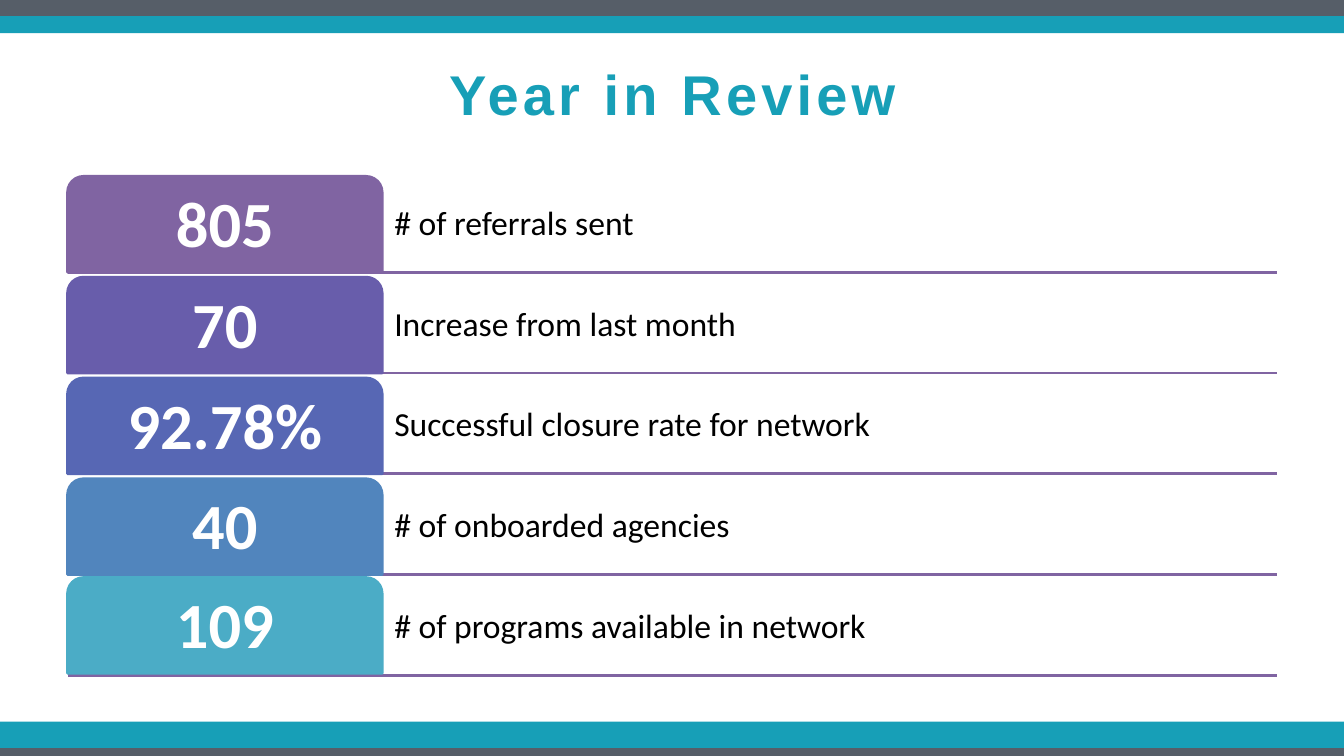
from pptx import Presentation
from pptx.dml.color import RGBColor
from pptx.enum.shapes import MSO_CONNECTOR, MSO_SHAPE
from pptx.enum.text import MSO_ANCHOR, PP_ALIGN
from pptx.oxml.ns import qn
from pptx.util import Inches, Pt
from lxml.etree import SubElement

GREY, TEAL, PURPLE = "565E68", "179FB7", "8064A2"
LEFT, TAB_W, ROW_W = 0.67, 3.12, 12
TOP, PITCH, ROW_H = 1.75, 1, 0.95

# value, label, tab colour, tab shift
ROWS = [
    ("805", "# of referrals sent", PURPLE, 0),
    ("70", "Increase from last month", "685DAB", 0),
    ("92.78%", "Successful closure rate for network", "5767B4", 0),
    ("40", "# of onboarded agencies", "5185BD", 0),
    ("109", "# of programs available in network", "4BACC6", -0.02),
]

# top, height, colour of the full-width bars
BARS = [(7.42, 0.08, GREY), (7.16, 0.26, TEAL), (0, 0.17, GREY), (0.16, 0.17, TEAL)]


def rgb(color):
    return RGBColor.from_string(color)


def box(x, y, w, h):
    return [Inches(v) for v in (x, y, w, h)]


def write(tf, text, font, size, color, bold=False, align=PP_ALIGN.LEFT):
    tf.word_wrap = True
    tf.vertical_anchor = MSO_ANCHOR.MIDDLE
    p = tf.paragraphs[0]
    p.alignment = align
    r = p.add_run()
    r.text = text
    r.font.name, r.font.size, r.font.bold = font, Pt(size), bold
    r.font.color.rgb = rgb(color)
    return p, r


def set_insets(tf, side, left=None):
    tf.margin_top = tf.margin_bottom = tf.margin_right = Inches(side)
    tf.margin_left = Inches(side if left is None else left)


def add_bar(s, y, h, color):
    sp = s.shapes.add_shape(MSO_SHAPE.RECTANGLE, *box(0, y, 13.33, h))
    sp.shadow.inherit = False
    sp.fill.solid()
    sp.fill.fore_color.rgb = rgb(color)
    sp.line.fill.background()


def add_title(s, text):
    sp = s.shapes.title
    sp.left, sp.top, sp.width, sp.height = box(LEFT, 0.3, ROW_W, 1.25)
    _, r = write(sp.text_frame, text, "Arial", 40, TEAL, True, PP_ALIGN.CENTER)
    r.font._element.set("spc", "300")


def add_rule(s, y):
    line = s.shapes.add_connector(
        MSO_CONNECTOR.STRAIGHT, *box(LEFT, y, LEFT + ROW_W, y))
    line.line.color.rgb = rgb(PURPLE)
    line.line.width = Pt(2)
    SubElement(line._element.spPr, qn("a:effectLst"))


def add_label(s, y, text):
    sp = s.shapes.add_textbox(*box(LEFT + TAB_W, y, ROW_W - TAB_W, ROW_H))
    set_insets(sp.text_frame, 0.05, 0.12)
    p, _ = write(sp.text_frame, text, "Calibri", 24, "000000")
    p.line_spacing = 0.9


def add_tab(s, y, value, color):
    sp = s.shapes.add_shape(
        MSO_SHAPE.ROUND_2_SAME_RECTANGLE, *box(LEFT, y, TAB_W, ROW_H))
    sp.adjustments[0] = 0.167
    sp.shadow.inherit = False
    sp.fill.solid()
    sp.fill.fore_color.rgb = sp.line.color.rgb = rgb(color)
    sp.line.width = Pt(2)
    set_insets(sp.text_frame, 0.1)
    p, _ = write(sp.text_frame, value, "Calibri", 46, "FFFFFF", True, PP_ALIGN.CENTER)
    p.line_spacing = 0.9


def main():
    prs = Presentation()
    prs.slide_width, prs.slide_height = Inches(13.33), Inches(7.5)
    s = prs.slides.add_slide(prs.slide_layouts[5])

    # Frame and title
    for bar in BARS:
        add_bar(s, *bar)
    add_title(s, "Year in Review")

    # Rules lie behind the tabs
    for i in range(len(ROWS)):
        add_rule(s, TOP + i * PITCH + ROW_H)

    # Figures with their labels
    for i, (value, label, color, shift) in enumerate(ROWS):
        y = TOP + i * PITCH
        add_label(s, y, label)
        add_tab(s, y + shift, value, color)

    prs.save("out.pptx")


if __name__ == "__main__":
    main()
